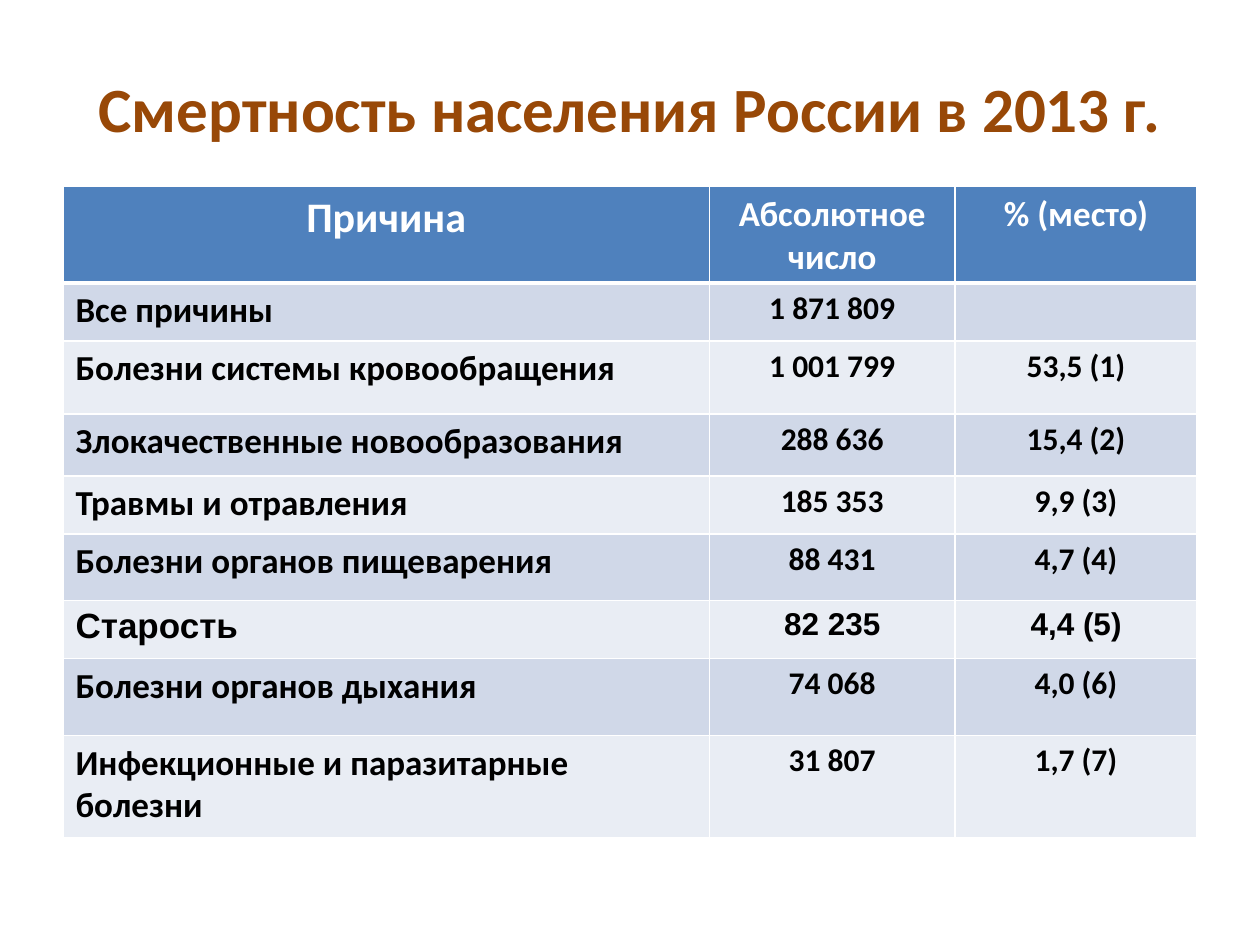
from lxml.etree import SubElement
from pptx import Presentation
from pptx.dml.color import RGBColor
from pptx.enum.text import MSO_ANCHOR, PP_ALIGN
from pptx.oxml.ns import qn
from pptx.util import Inches, Pt

COLUMNS = [5.13, 1.95, 1.92]
ROWS = [0.74, 0.46, 0.58, 0.49, 0.46, 0.53, 0.46, 0.61, 0.81]
HEADER = ["Причина", "Абсолютное число", "% (место)"]
CAUSES = [
    ["Все причины", "1 871 809", ""],
    ["Болезни системы кровообращения", "1 001 799", "53,5 (1)"],
    ["Злокачественные новообразования", "288 636", "15,4 (2)"],
    ["Травмы и отравления", "185 353", "9,9 (3)"],
    ["Болезни органов пищеварения", "88 431", "4,7 (4)"],
    ["Старость", "82 235", "4,4 (5)"],
    ["Болезни органов дыхания", "74 068", "4,0 (6)"],
    ["Инфекционные и паразитарные болезни", "31 807", "1,7 (7)"],
]
BANDS = ["D0D8E8", "E9EDF4"]


def rgb(value):
    return RGBColor.from_string(value)


def write(tf, text, size, color, align=PP_ALIGN.CENTER, name="Calibri"):
    p = tf.paragraphs[0]
    p.text = text
    p.alignment = align
    p.font.size = Pt(size)
    p.font.bold = True
    p.font.name = name
    p.font.color.rgb = rgb(color)


def add_title(s, text):
    tf = s.shapes.add_textbox(Inches(0.5), Inches(0.3), Inches(9), Inches(1.11)).text_frame
    tf.word_wrap = True
    tf.vertical_anchor = MSO_ANCHOR.MIDDLE
    write(tf, text, 36, "984807")


def paint(cell, color, bottom):
    tcPr = cell._tc.get_or_add_tcPr()
    for side, width in (("L", 1), ("R", 1), ("T", 1), ("B", bottom)):
        ln = SubElement(tcPr, qn(f"a:ln{side}"), w=str(Pt(width)))
        SubElement(SubElement(ln, qn("a:solidFill")), qn("a:srgbClr"), val="FFFFFF")
    cell.fill.solid()
    cell.fill.fore_color.rgb = rgb(color)


def add_header(table):
    for col, text in enumerate(HEADER):
        cell = table.cell(0, col)
        paint(cell, "4F81BD", 3)
        write(cell.text_frame, text, 20 if col else 24, "FFFFFF")


def add_cause(table, row, values):
    name = "Arial" if values[0] == "Старость" else "Calibri"
    for col, text in enumerate(values):
        cell = table.cell(row, col)
        paint(cell, BANDS[(row - 1) % 2], 1)
        size, align = (18, PP_ALIGN.CENTER) if col else (20, PP_ALIGN.LEFT)
        write(cell.text_frame, text, size, "000000", align, name)


def add_mortality_table(s):
    table = s.shapes.add_table(
        len(ROWS), len(COLUMNS), Inches(0.5), Inches(1.48),
        Inches(sum(COLUMNS)), Inches(sum(ROWS)),
    ).table
    for column, width in zip(table.columns, COLUMNS):
        column.width = Inches(width)
    for row, height in zip(table.rows, ROWS):
        row.height = Inches(height)
    add_header(table)
    for row, values in enumerate(CAUSES, 1):
        add_cause(table, row, values)


def main():
    prs = Presentation()
    prs.slide_width, prs.slide_height = Inches(10), Inches(7.5)
    s = prs.slides.add_slide(prs.slide_layouts[6])
    add_title(s, "Смертность населения России в 2013 г.")
    add_mortality_table(s)
    prs.save("out.pptx")


if __name__ == "__main__":
    main()
